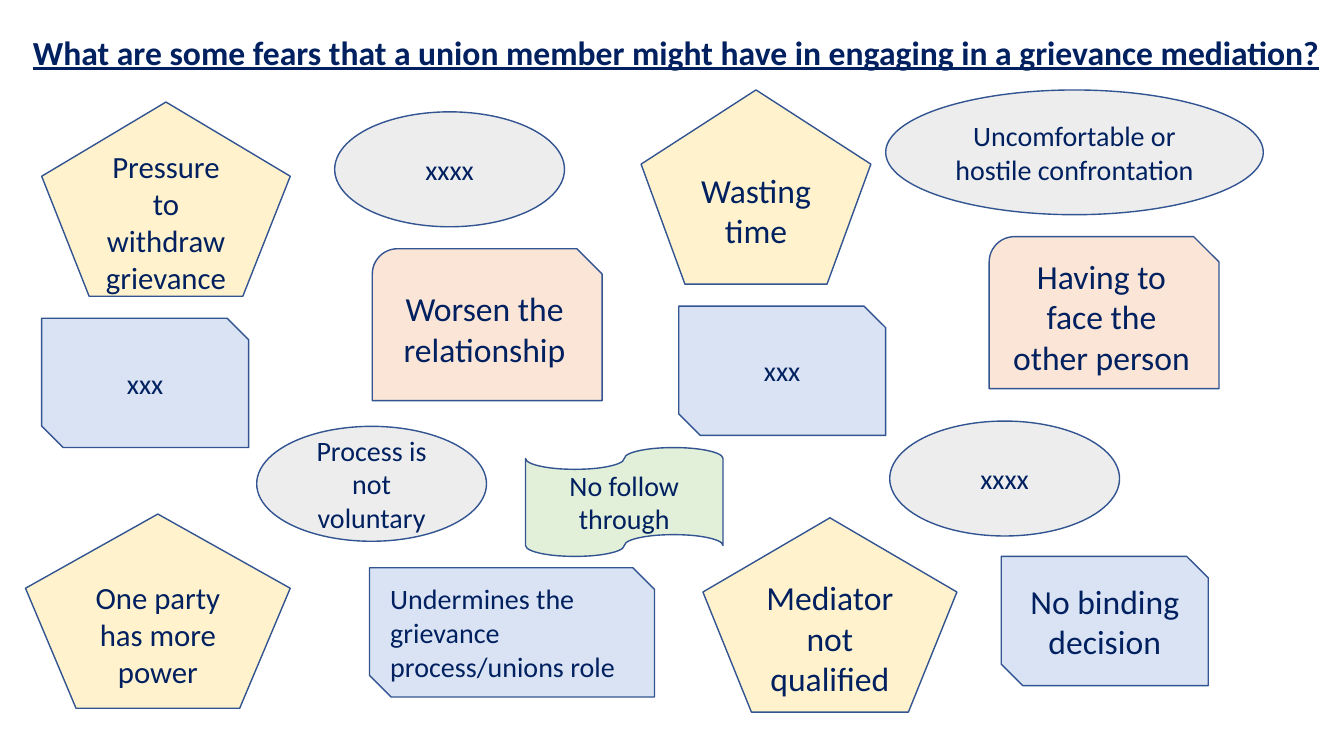
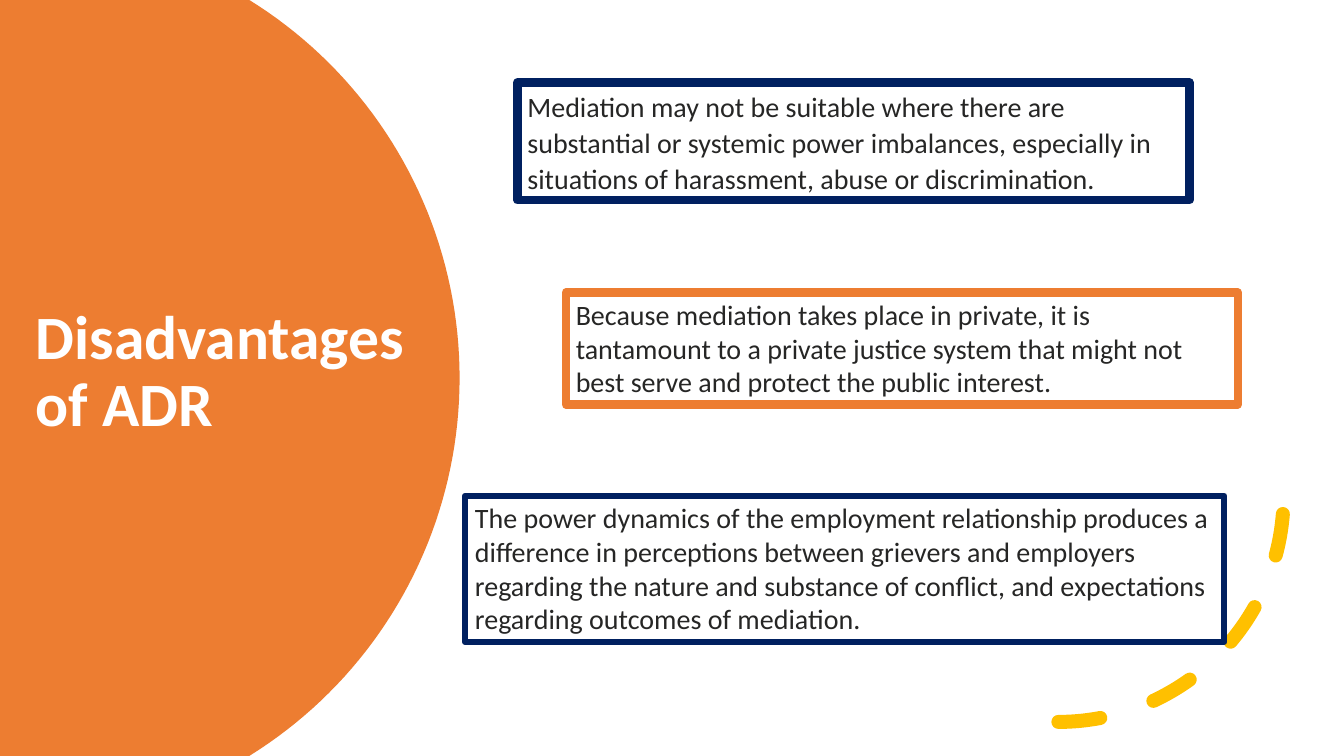
import math
import pptx
import pptx.util
import pptx.dml.color
import pptx.enum.dml
import pptx.enum.shapes
import pptx.enum.text
import pptx.oxml.ns

FORM = pptx.enum.shapes.MSO_SHAPE
ALIGN = pptx.enum.text.PP_ALIGN
ANCHOR = pptx.enum.text.MSO_ANCHOR
FONT = "Calibri"
COLOR = {
    "navy": "002060", "edge": "325491", "orange": "ED7D31", "gold": "FFC000",
    "ink": "262625", "white": "FFFFFF", "cream": "FFF2CC", "gray": "EDEDED",
    "peach": "FBE5D6", "sky": "DAE3F3", "mint": "E2F0D9",
}
# Kind of fear card: preset, fill, usual width and height in percent
KIND = {
    "star": (FORM.REGULAR_PENTAGON, "cream", 17.1, 25.7),
    "oval": (FORM.OVAL, "gray", 17.1, 15.2),
    "round": (FORM.SNIP_ROUND_RECTANGLE, "peach", 17.1, 20.1),
    "snip": (FORM.SNIP_2_DIAG_RECTANGLE, "sky", 15.4, 17.1),
    "tape": (FORM.FLOWCHART_PUNCHED_TAPE, "mint", 14.7, 14.4),
}


def tint(name):
    return pptx.dml.color.RGBColor.from_string(COLOR[name])


def style(target, values):
    for name, value in values.items():
        setattr(target, name, value)


class Deck:
    """Holds the style and the current slide; lengths are percent of its size."""

    def __init__(self):
        self.prs = pptx.Presentation()
        self.wide = pptx.util.Inches(13.333)
        self.high = pptx.util.Inches(7.5)
        style(self.prs, {"slide_width": self.wide, "slide_height": self.high})

    def start(self):
        layout = self.prs.slide_layouts.get_by_name("Title Only")
        self.slide = self.prs.slides.add_slide(layout)

    def box(self, x, y, w, h):
        return [round(part * full / 100) for part, full in
                zip((x, y, w, h), (self.wide, self.high) * 2)]

    def label(self, shape, text, size, color, align=ALIGN.LEFT,
              anchor=ANCHOR.TOP, space=1.0, wrap=True, **font):
        frame = shape.text_frame
        style(frame, {"text": text, "word_wrap": wrap,
                      "auto_size": pptx.enum.text.MSO_AUTO_SIZE.NONE,
                      "vertical_anchor": anchor})
        para = frame.paragraphs[0]
        style(para, {"alignment": align, "line_spacing": space})
        face = para.runs[0].font
        style(face, {"name": FONT, "size": pptx.util.Pt(size), **font})
        face.color.rgb = tint(color)

    def paint(self, shape, fill=None, line=None, width=1):
        shape.shadow.inherit = False
        for part, color in ((shape.fill, fill), (shape.line.fill, line)):
            if color:
                part.solid()
                part.fore_color.rgb = tint(color)
            else:
                part.background()
        if line:
            shape.line.width = pptx.util.Pt(width)

    def title(self, text, area, size, color, **look):
        shape = self.slide.shapes.title
        style(shape, dict(zip(("left", "top", "width", "height"),
                              self.box(*area))))
        self.label(shape, text, size, color, bold=True, **look)
        # Bring the title in front of what is already drawn
        self.slide.shapes.element.append(shape.element)

    def shape(self, form, area, **look):
        shape = self.slide.shapes.add_shape(form, *self.box(*area))
        self.paint(shape, **look)
        return shape

    def card(self, kind, text, x, y, size=20, w=None, h=None,
             align=ALIGN.CENTER):
        form, fill, wide, high = KIND[kind]
        shape = self.shape(form, (x, y, w or wide, h or high),
                           fill=fill, line="edge")
        self.label(shape, text, size, "navy", align, ANCHOR.MIDDLE)

    def note(self, text, area, line, width, space=1.0):
        shape = self.shape(FORM.RECTANGLE, area, line=line, width=width)
        self.label(shape, text, 20, "ink", space=space)

    def disc(self, mid, edge, color, steps=80):
        """Circle cut off by the left, top and bottom slide edges."""
        mid, edge = mid * self.wide / 100, edge * self.wide / 100
        ray, half = edge - mid, self.high / 2
        turn = math.asin(half / ray)
        angles = [turn * (2 * i / steps - 1) for i in range(steps + 1)]
        curve = [(round(mid + ray * math.cos(a)),
                  round(half + ray * math.sin(a))) for a in angles]
        outline = self.slide.shapes.build_freeform(0, 0)
        outline.add_line_segments(curve + [(0, self.high)], close=True)
        self.paint(outline.convert_to_shape(), fill=color)

    def arc(self, area, color, width):
        shape = self.shape(FORM.ARC, area, line=color, width=width)
        shape.line.dash_style = pptx.enum.dml.MSO_LINE.DASH
        props = shape.element.spPr
        props.find(pptx.oxml.ns.qn("a:xfrm")).set("flipV", "1")
        props.find(pptx.oxml.ns.qn("a:ln")).set("cap", "rnd")


def fears(deck):
    deck.start()
    deck.title("What are some fears that a union member might have in "
               "engaging in a grievance mediation?",
               (1.7, 3.5, 98.2, 6.7), 24, "navy", wrap=False, underline=True)
    # Kind, text, left, top, then what differs from the usual card
    cards = [
        ("snip", "xxx", 3.1, 42.1, {}),
        ("round", "Worsen the relationship", 27.7, 32.9, {"size": 24}),
        ("oval", "Process is not voluntary", 19.1, 56.4, {}),
        ("snip", "Undermines the grievance process/unions role", 27.5, 75.1,
         {"w": 21.2, "align": ALIGN.LEFT}),
        ("oval", "xxxx", 24.9, 14.8, {}),
        ("star", "Pressure to withdraw grievance", 3.1, 13.5,
         {"size": 22, "w": 18.5}),
        ("star", "One party has more power", 1.9, 68, {"size": 22, "w": 19.7}),
        ("snip", "xxx", 50.5, 40.5, {}),
        ("round", "Having to face the other person", 73.6, 31.3, {"size": 24}),
        ("oval", "xxxx", 66.2, 55.7, {}),
        ("snip", "No binding decision", 74.5, 73.6, {"size": 24}),
        ("oval", "Uncomfortable or hostile confrontation", 65.9, 11.9,
         {"w": 28.1, "h": 16.5}),
        ("star", "Wasting time", 47.7, 11.9, {"size": 24}),
        ("star", "Mediator not qualified", 52.3, 68.5,
         {"size": 24, "w": 18.9}),
        ("tape", "No follow through", 39.1, 59.2, {}),
    ]
    for kind, text, x, y, extra in cards:
        deck.card(kind, text, x, y, **extra)


def limits(deck):
    deck.start()
    # Orange side with the title
    deck.disc(1.1, 34.2, "orange")
    deck.title("Disadvantages of ADR", (1.9, 16.8, 29.9, 65.1), 44, "white",
               anchor=ANCHOR.MIDDLE, space=0.9)
    # Dashed curve behind the framed notes
    deck.arc((62, 35.9, 33.5, 59.6), "gold", 10)
    deck.note("Mediation may not be suitable where there are substantial or "
              "systemic power imbalances, especially in situations of "
              "harassment, abuse or discrimination.",
              (38.5, 10.9, 50, 15.6), "navy", 6, space=1.07)
    deck.note("Because mediation takes place in private, it is tantamount to "
              "a private justice system that might not best serve and protect "
              "the public interest.",
              (42.1, 38.7, 50, 14.8), "orange", 6)
    deck.note("The power dynamics of the employment relationship produces a "
              "difference in perceptions between grievers and employers "
              "regarding the nature and substance of conflict, and "
              "expectations regarding outcomes of mediation.",
              (34.6, 65.6, 56.5, 19.3), "navy", 4.5)


def main():
    deck = Deck()
    fears(deck)
    limits(deck)
    deck.prs.save("out.pptx")


if __name__ == "__main__":
    main()
